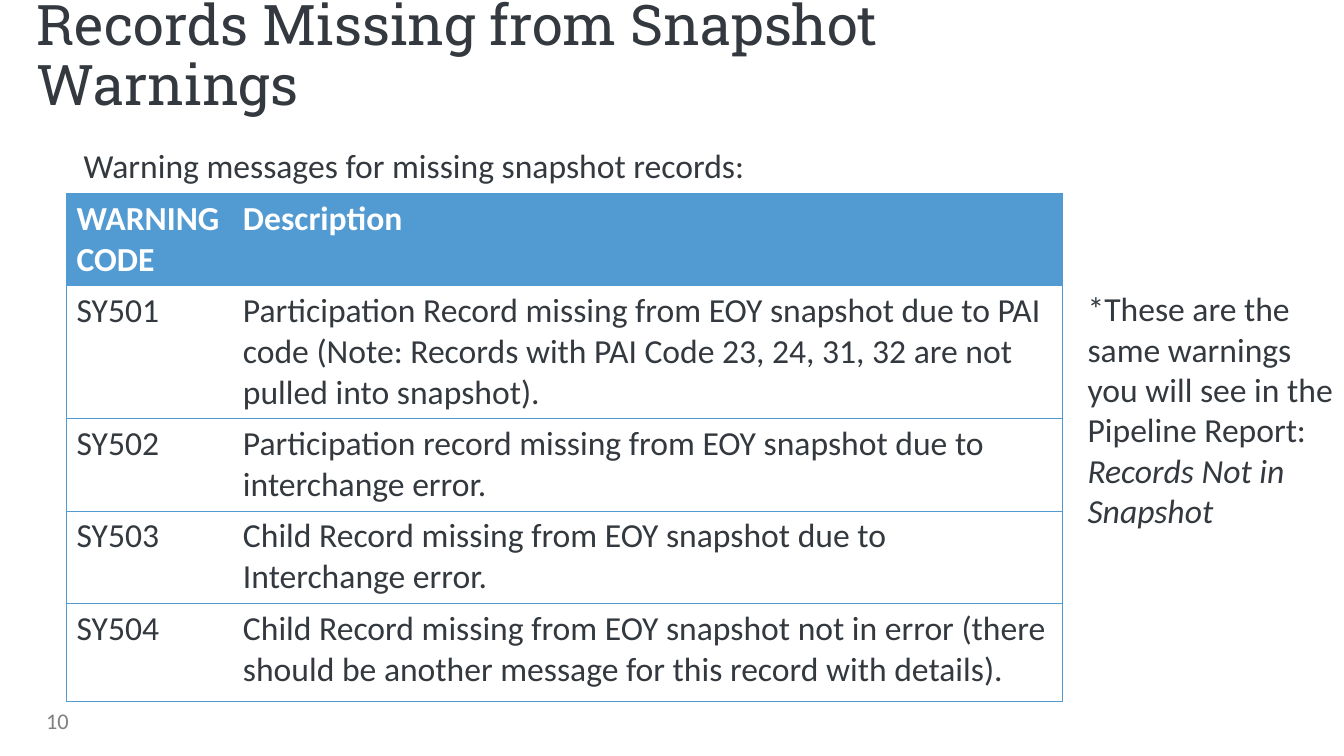
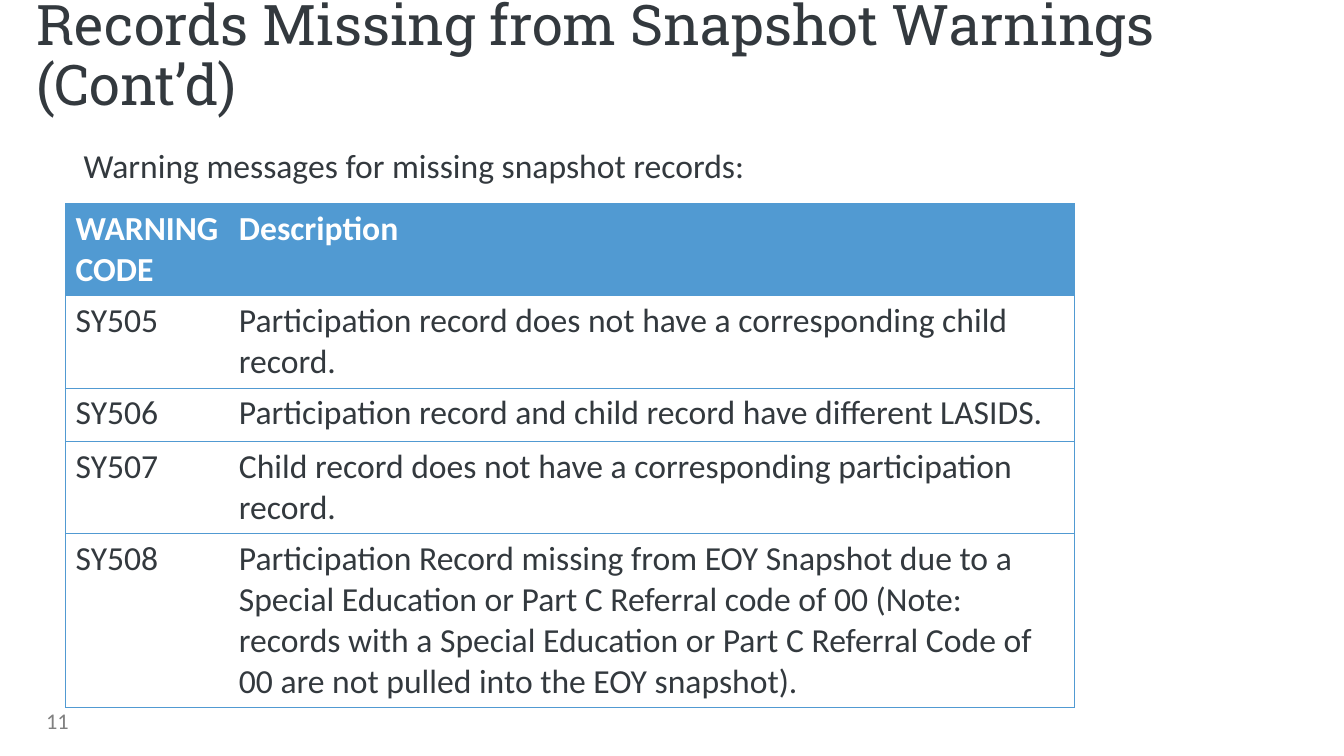
from lxml.etree import SubElement
from pptx import Presentation
from pptx.dml.color import RGBColor
from pptx.enum.text import MSO_ANCHOR as Anchor
from pptx.oxml.ns import qn
from pptx.util import Emu, Inches, Pt

INK, BLUE, WHITE, GREY = "33393E", "519AD2", "FFFFFF", "808080"
TITLE_FONT, BODY_FONT = "Roboto Slab", "Calibri"
SLIDE_WIDTH, SLIDE_HEIGHT = Inches(13.33), Inches(7.5)
NO_STYLE_NO_GRID = "{2D5ABB26-0587-4C30-8999-92F81FD0307C}"
FIRST_NUMBER = 10

HEADINGS = ("WARNING CODE", "Description")
LEAD_TEXT = "Warning messages for missing snapshot records:"

# All boxes are left, top, width, height in hundredths of the slide's size.
LEAD_BOX = (5.85, 19.73, 51.6, 7.73)
NOTE_BOX = (80.18, 37.47, 20.63, 33.6)
NUMBER_BOX = (2.7, 92.67, 22.5, 5.33)
HEADER_HEIGHT = 12.2

PAGES = [
    {
        "title": "Records Missing from Snapshot Warnings",
        "title_width": 75.1,
        "table_at": (4.95, 25.6),
        "columns": (12.38, 61.73),
        "warnings": [
            ("SY501", "Participation Record missing from EOY snapshot due to PAI "
             "code (Note: Records with PAI Code 23, 24, 31, 32 are not pulled "
             "into snapshot).", 17.6),
            ("SY502", "Participation record missing from EOY snapshot due to "
             "interchange error.", 12.2),
            ("SY503", "Child Record missing from EOY snapshot due to "
             "Interchange error.", 12.2),
            ("SY504", "Child Record missing from EOY snapshot not in error (there "
             "should be another message for this record with details).", 12.93),
        ],
        "note": ("*These are the same warnings you will see in the Pipeline Report: ",
                 "Records Not in Snapshot"),
    },
    {
        "title": "Records Missing from Snapshot Warnings (Cont’d)",
        "title_width": 90.15,
        "table_at": (4.88, 26.93),
        "columns": (12.15, 62.93),
        "warnings": [
            ("SY505", "Participation record does not have a corresponding child "
             "record.", 12.2),
            ("SY506", "Participation record and child record have different "
             "LASIDS.", 7.07),
            ("SY507", "Child record does not have a corresponding participation "
             "record.", 12.2),
            ("SY508", "Participation Record missing from EOY Snapshot due to a "
             "Special Education or Part C Referral code of 00 (Note: records with "
             "a Special Education or Part C Referral Code of 00 are not pulled "
             "into the EOY snapshot).", 23),
        ],
        "note": None,
    },
]


def across(share):
    return Emu(round(SLIDE_WIDTH * share / 100))


def down(share):
    return Emu(round(SLIDE_HEIGHT * share / 100))


def place(box):
    left, top, width, height = box
    return across(left), down(top), across(width), down(height)


def rgb(color):
    return RGBColor.from_string(color)


def write(para, text, size=24, font=BODY_FONT, color=INK, bold=False, italic=False):
    span = para.add_run()
    span.text = text
    span.font.size = Pt(size)
    span.font.name = font
    span.font.color.rgb = rgb(color)
    span.font.bold = bold
    span.font.italic = italic


def add_text(page, box, text, anchor=Anchor.TOP, insets=None, spacing=None, **style):
    """Add a wrapped text box; insets are left, top, right, bottom in inches."""
    frame = page.shapes.add_textbox(*place(box)).text_frame
    frame.word_wrap = True
    frame.vertical_anchor = anchor
    if insets:
        (frame.margin_left, frame.margin_top,
         frame.margin_right, frame.margin_bottom) = map(Inches, insets)
    para = frame.paragraphs[0]
    if spacing:
        para.line_spacing = spacing
    write(para, text, **style)
    return para


def add_title(page, text, width):
    add_text(page, (2.7, 1.07, width, 13.07), text, Anchor.MIDDLE, (0, 0, 0, 0),
             0.9, size=40, font=TITLE_FONT)


def add_lead(page):
    add_text(page, LEAD_BOX, LEAD_TEXT, insets=(0.05, 0, 0, 0), spacing=0.9)


def add_note(page, opening, report):
    para = add_text(page, NOTE_BOX, opening)
    write(para, report, italic=True)


def add_page_number(page, number):
    add_text(page, NUMBER_BOX, str(number), Anchor.MIDDLE, size=16, color=GREY)


def add_borders(cell, sides):
    properties = cell._tc.get_or_add_tcPr()
    for side in sides:
        line = SubElement(properties, qn(f"a:ln{side}"), w=str(Pt(0.5)))
        fill = SubElement(line, qn("a:solidFill"))
        SubElement(fill, qn("a:srgbClr"), val=BLUE)


def add_warning_table(page, corner, columns, warnings):
    rows = [(*HEADINGS, HEADER_HEIGHT), *warnings]
    box = (*corner, sum(columns), sum(height for _, _, height in rows))
    table = page.shapes.add_table(len(rows), len(columns), *place(box)).table
    table.horz_banding = False
    table._tbl.tblPr.find(qn("a:tableStyleId")).text = NO_STYLE_NO_GRID
    for column, width in zip(table.columns, columns):
        column.width = across(width)
    for row, (code, description, height) in enumerate(rows):
        table.rows[row].height = down(height)
        header = row == 0
        for index, (text, outer_side) in enumerate(((code, "L"), (description, "R"))):
            cell = table.cell(row, index)
            add_borders(cell, (outer_side, "T", "B"))
            cell.fill.solid()
            cell.fill.fore_color.rgb = rgb(BLUE if header else WHITE)
            write(cell.text_frame.paragraphs[0], text,
                  color=WHITE if header else INK, bold=header)


def add_warning_page(deck, number, content):
    page = deck.slides.add_slide(deck.slide_layouts[6])
    add_title(page, content["title"], content["title_width"])
    add_lead(page)
    add_warning_table(page, content["table_at"], content["columns"],
                      content["warnings"])
    if content["note"]:
        add_note(page, *content["note"])
    add_page_number(page, number)


def main():
    deck = Presentation()
    deck.slide_width, deck.slide_height = SLIDE_WIDTH, SLIDE_HEIGHT
    for number, content in enumerate(PAGES, FIRST_NUMBER):
        add_warning_page(deck, number, content)
    deck.save("out.pptx")


if __name__ == "__main__":
    main()
